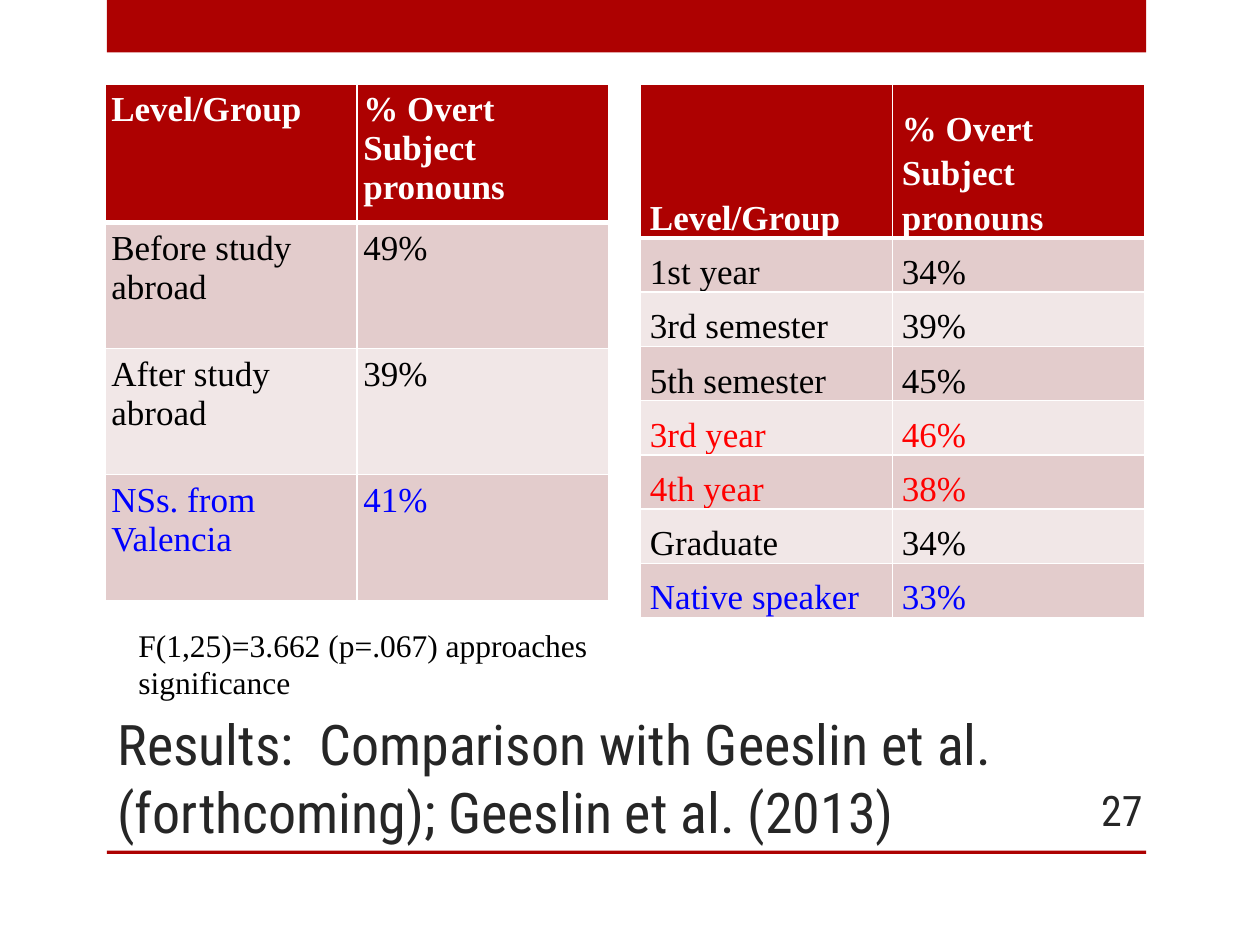
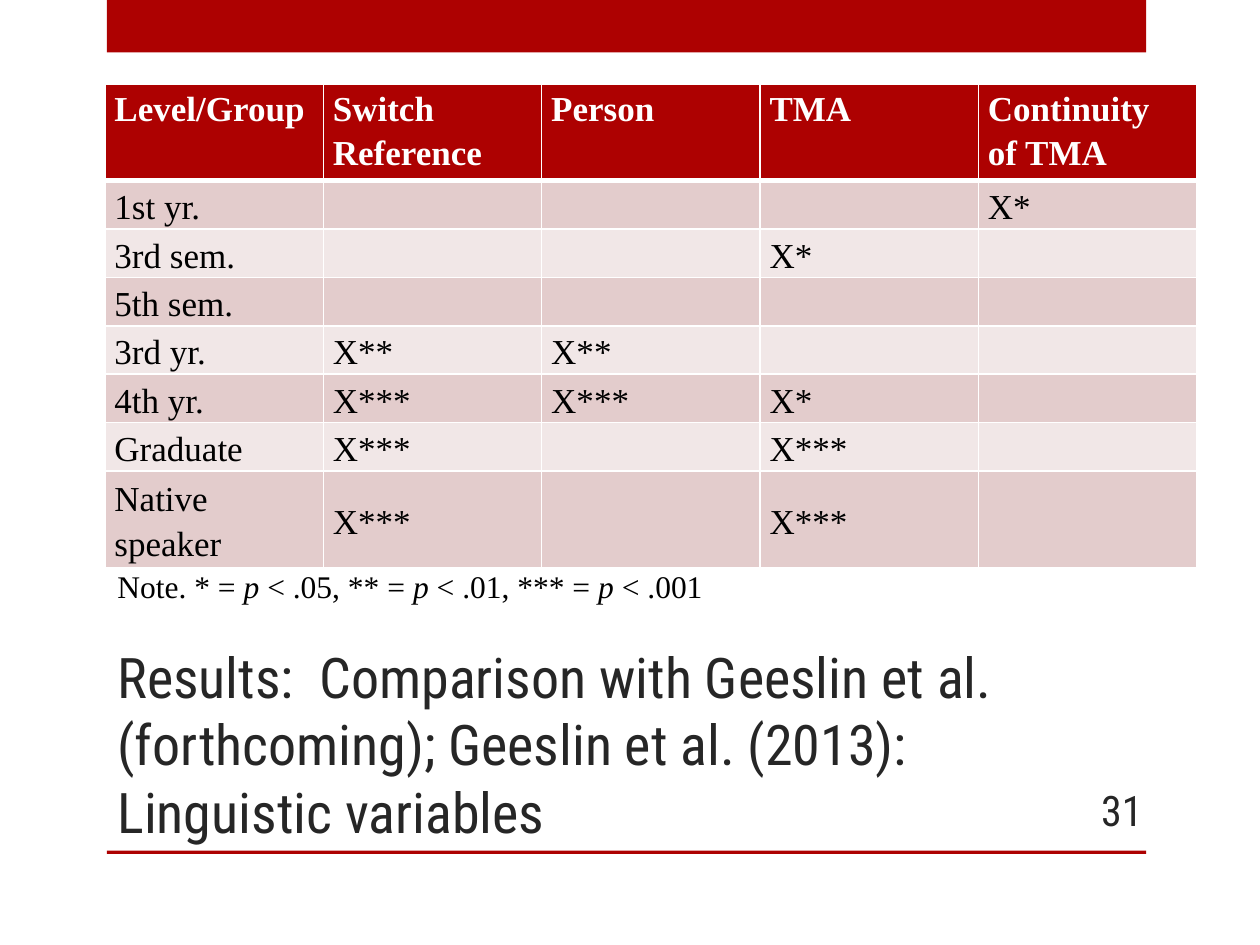
"""Build two result slides comparing overt subject pronouns and linguistic variables."""
from lxml import etree
from pptx import Presentation
from pptx.dml.color import RGBColor
from pptx.enum import shapes, text
from pptx.oxml import ns
from pptx.util import Pt

RED = RGBColor(0xAD, 0x01, 0x01)
WHITE = RGBColor(0xFF, 0xFF, 0xFF)
BLACK = RGBColor(0, 0, 0)
INK = RGBColor(0x26, 0x26, 0x26)
BRIGHT_RED = RGBColor(0xFF, 0, 0)
BLUE = RGBColor(0, 0, 0xFF)
BANDS = [RGBColor(0xF1, 0xE7, 0xE7), RGBColor(0xE3, 0xCC, 0xCC)]
HEADING_FONT = "Roboto Condensed"
BODY_FONT = "Times New Roman"
TOP, MIDDLE, BOTTOM = (
    text.MSO_ANCHOR.TOP, text.MSO_ANCHOR.MIDDLE, text.MSO_ANCHOR.BOTTOM)
TABLE_LEFT, TABLE_TOP = 60, 48

TITLE = "Results:  Comparison with Geeslin et al.  (forthcoming); Geeslin et al. (2013)"
NOTE = ["Note. * = ", "p ", "< .05, ** = ", "p ", "< .01, *** = ", "p ", "< .001"]

STUDY_ABROAD = {
    "left": TABLE_LEFT, "columns": [144, 144], "heights": [72] * 4,
    "inset": (3.6, 3.6), "spacing": None, "anchors": (TOP, TOP),
    "colors": {3: BLUE},
    "rows": [
        ["Level/Group", "% Overt Subject pronouns"],
        ["Before study abroad", "49%"],
        ["After study abroad", "39%"],
        ["NSs. from Valencia", "41%"],
    ],
}
COURSE_LEVELS = {
    "left": 366, "columns": [144, 144], "heights": [88] + [31] * 7,
    "inset": (5.4, 0), "spacing": 1.15, "anchors": (BOTTOM, BOTTOM),
    "colors": {4: BRIGHT_RED, 5: BRIGHT_RED, 7: BLUE},
    "rows": [
        ["Level/Group", "% Overt Subject pronouns"],
        ["1st year", "34%"],
        ["3rd semester", "39%"],
        ["5th semester", "45%"],
        ["3rd year", "46%"],
        ["4th year", "38%"],
        ["Graduate", "34%"],
        ["Native speaker", "33%"],
    ],
}
VARIABLES = {
    "left": TABLE_LEFT, "columns": [124.8] * 5, "heights": [51] + [25.5] * 6 + [51],
    "inset": (5.4, 0), "spacing": 1.15, "anchors": (TOP, MIDDLE),
    "colors": {},
    "rows": [
        ["Level/Group", "Switch Reference", "Person", "TMA", "Continuity of TMA"],
        ["1st yr.", "", "", "", "X*"],
        ["3rd sem.", "", "", "X*", ""],
        ["5th sem.", "", "", "", ""],
        ["3rd yr.", "X**", "X**", "", ""],
        ["4th yr.", "X***", "X***", "X*", ""],
        ["Graduate", "X***", "", "X***", ""],
        ["Native speaker", "X***", "", "X***", ""],
    ],
}
SLIDES = [
    {"title": TITLE, "number": "27", "tables": [STUDY_ABROAD, COURSE_LEVELS],
     "note": ["F(1,25)=3.662 (p=.067) approaches significance"],
     "note_area": (72, 354, 276, 51)},
    {"title": TITLE + ": Linguistic variables", "number": "31", "tables": [VARIABLES],
     "note": NOTE, "note_area": (60, 320.5, 353.5, 29)},
]


def add_span(para, words, font, size, color, bold=False, italic=False):
    span = para.add_run()
    span.text = words
    span.font.name = font
    span.font.size = Pt(size)
    span.font.color.rgb = color
    span.font.bold = bold
    span.font.italic = italic


def add_box(page, area, anchor=TOP):
    box = page.shapes.add_textbox(*[Pt(length) for length in area])
    box.text_frame.word_wrap = True
    box.text_frame.vertical_anchor = anchor
    return box.text_frame.paragraphs[0]


deck = Presentation()
deck.slide_width, deck.slide_height = Pt(720), Pt(540)

for content in SLIDES:
    page = deck.slides.add_slide(deck.slide_layouts[6])

    for band_top, band_height in [(0, 30), (486, 2)]:
        band = page.shapes.add_shape(
            shapes.MSO_SHAPE.RECTANGLE, Pt(61), Pt(band_top), Pt(594), Pt(band_height))
        band.shadow.inherit = False
        band.fill.solid()
        band.fill.fore_color.rgb = RED
        band.line.fill.background()

    para = add_box(page, (60, 360, 594, 126), BOTTOM)
    add_span(para, content["title"], HEADING_FONT, 32, INK)

    for layout in content["tables"]:
        rows, columns, heights = layout["rows"], layout["columns"], layout["heights"]
        grid = page.shapes.add_table(
            len(rows), len(columns), Pt(layout["left"]), Pt(TABLE_TOP),
            Pt(sum(columns)), Pt(sum(heights))).table
        for column, width in zip(grid.columns, columns):
            column.width = Pt(width)
        for r, (row, height) in enumerate(zip(rows, heights)):
            grid.rows[r].height = Pt(height)
            header = r == 0
            color = WHITE if header else layout["colors"].get(r, BLACK)
            for c, words in enumerate(row):
                cell = grid.cell(r, c)
                cell.fill.solid()
                cell.fill.fore_color.rgb = RED if header else BANDS[r % 2]
                side, edge = layout["inset"]
                cell.margin_left = cell.margin_right = Pt(side)
                cell.margin_top = cell.margin_bottom = Pt(edge)
                cell.vertical_anchor = layout["anchors"][0 if header else 1]
                if words:
                    para = cell.text_frame.paragraphs[0]
                    para.line_spacing = layout["spacing"]
                    add_span(para, words, BODY_FONT, 20, color, bold=header)
                props = cell._tc.get_or_add_tcPr()
                for place, name in enumerate(["lnL", "lnR", "lnT", "lnB"]):
                    thick = (r, name) in [(0, "lnB"), (1, "lnT")]
                    border = etree.Element(ns.qn("a:" + name), w=str(Pt(3 if thick else 1)))
                    paint = etree.SubElement(border, ns.qn("a:solidFill"))
                    etree.SubElement(paint, ns.qn("a:srgbClr"), val=str(WHITE))
                    props.insert(place, border)

    para = add_box(page, content["note_area"])
    for words in content["note"]:
        add_span(para, words, BODY_FONT, 18, BLACK, italic=words == "p ")

    para = add_box(page, (600, 448, 60, 29), MIDDLE)
    para.alignment = text.PP_ALIGN.RIGHT
    add_span(para, content["number"], HEADING_FONT, 24, INK)

deck.save("out.pptx")
